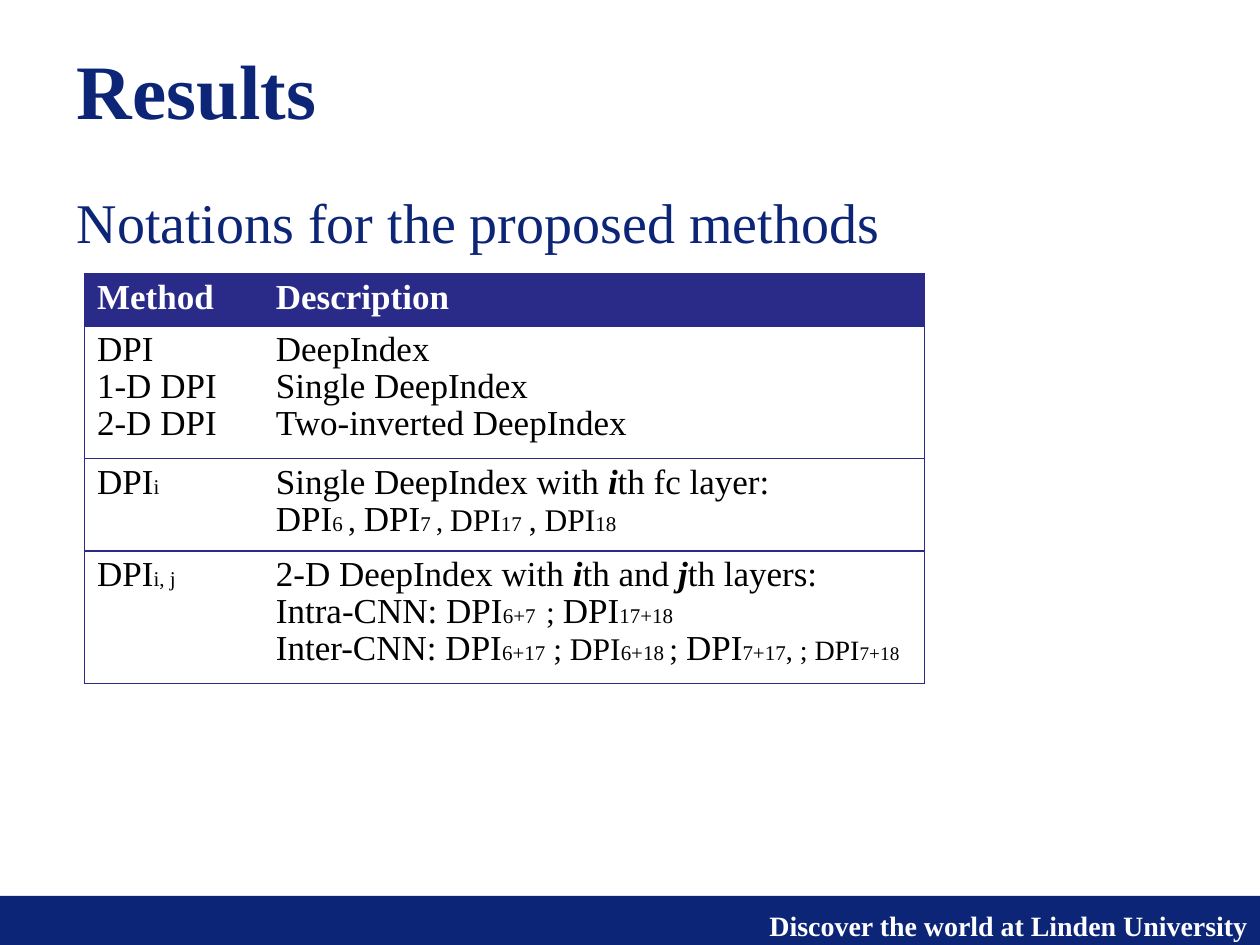
from lxml import etree
from pptx import Presentation, util as u
from pptx.dml.color import RGBColor
from pptx.enum import shapes, text
from pptx.oxml.ns import qn

NAVY, INDIGO, WHITE, BLACK = "0C2577", "2A2A89", "FFFFFF", "000000"

# A cell is a list of lines; a line is a list of (text, size, emphasis) runs.
HEADER = ["Method", "Description"]
ROWS = [
    [
        [[("DPI", 20)], [("1-D DPI", 20)], [("2-D DPI", 20)]],
        [[("DeepIndex", 20)], [("Single DeepIndex", 20)], [("Two-inverted DeepIndex", 20)]],
    ],
    [
        [[("DPI", 20), ("i", 12)]],
        [
            [("Single DeepIndex with ", 20), ("i", 20, True), ("th fc layer:", 20)],
            [("DPI", 20), ("6 ", 12), (", ", 18), ("DPI", 20), ("7 ", 12), (", ", 16),
             ("DPI", 18), ("17", 12), (" ", 16), (", DPI", 18), ("18", 12)],
        ],
    ],
    [
        [[("DPI", 20), ("i, j", 12)]],
        [
            [("2-D DeepIndex with ", 20), ("i", 20, True), ("th and ", 20),
             ("j", 20, True), ("th layers:", 20)],
            [("Intra-CNN: DPI", 20), ("6+7  ", 12), ("; ", 18), ("DPI", 20), ("17+18", 12)],
            [("Inter-CNN: DPI", 20), ("6+17", 12), (" ; DPI", 18), ("6+18 ", 12), ("; ", 18),
             ("DPI", 20), ("7+17", 12), (", ; DPI", 16), ("7+18", 11)],
        ],
    ],
]
COLUMN_WIDTHS = [1.42, 5.25]
ROW_HEIGHTS = [0.41, 1.03, 0.72, 1.03]


def color(value):
    return RGBColor.from_string(value)


def add_run(paragraph, content, size=20, fill=BLACK, bold=False, italic=False,
            font="Times New Roman"):
    run = paragraph.add_run()
    run.text = content
    run.font.name = font
    run.font.size = u.Pt(size)
    run.font.bold = bold
    run.font.italic = italic
    run.font.color.rgb = color(fill)


def set_border(cell, edge, line_color=None):
    """Draw one cell edge (L, R, T or B), or hide it when no colour is given."""
    properties = cell._tc.get_or_add_tcPr()
    line = etree.SubElement(properties, qn(f"a:ln{edge}"), w=str(u.Pt(0.75)))
    if line_color:
        fill = etree.SubElement(line, qn("a:solidFill"))
        etree.SubElement(fill, qn("a:srgbClr"), val=line_color)
    else:
        etree.SubElement(line, qn("a:noFill"))


class SlideBuilder:
    def __init__(self, slide):
        self.slide = slide

    def band(self, left, top, width, height, fill=NAVY):
        shape = self.slide.shapes.add_shape(
            shapes.MSO_SHAPE.RECTANGLE, *map(u.Inches, (left, top, width, height)))
        shape.shadow.inherit = False
        shape.fill.solid()
        shape.fill.fore_color.rgb = color(fill)
        shape.line.fill.background()

    def text(self, content, left, top, width, height, margin_top=0.05,
             align=text.PP_ALIGN.LEFT, anchor=text.MSO_ANCHOR.TOP, **style):
        box = self.slide.shapes.add_textbox(*map(u.Inches, (left, top, width, height)))
        frame = box.text_frame
        frame.word_wrap = True
        frame.margin_top = u.Inches(margin_top)
        frame.vertical_anchor = anchor
        paragraph = frame.paragraphs[0]
        paragraph.alignment = align
        add_run(paragraph, content, **style)

    def table(self, left, top, widths, heights, header, rows):
        frame = self.slide.shapes.add_table(
            len(heights), len(widths),
            *map(u.Inches, (left, top, sum(widths), sum(heights))))
        table = frame.table
        table.horz_banding = False
        for column, width in zip(table.columns, widths):
            column.width = u.Inches(width)
        for row, height in zip(table.rows, heights):
            row.height = u.Inches(height)

        for index, title in enumerate(header):
            self.cell(table, 0, index, [[(title, 20)]], fill=INDIGO, ink=WHITE, bold=True)
        for row_index, row in enumerate(rows, start=1):
            for index, lines in enumerate(row):
                self.cell(table, row_index, index, lines)

    def cell(self, table, row, column, lines, fill=WHITE, ink=BLACK, bold=False):
        cell = table.cell(row, column)
        last = len(table.columns) - 1
        set_border(cell, "L", INDIGO if column == 0 else None)
        set_border(cell, "R", INDIGO if column == last else None)
        set_border(cell, "T", INDIGO)
        set_border(cell, "B", INDIGO)
        cell.fill.solid()
        cell.fill.fore_color.rgb = color(fill)
        frame = cell.text_frame
        for index, line in enumerate(lines):
            paragraph = frame.add_paragraph() if index else frame.paragraphs[0]
            paragraph.line_spacing = 0.95
            for content, size, *emphasis in line:
                add_run(paragraph, content, size=size, fill=ink,
                        bold=bold or bool(emphasis), italic=bool(emphasis))


def main():
    presentation = Presentation()
    presentation.slide_width = u.Inches(10)
    presentation.slide_height = u.Inches(7.5)
    builder = SlideBuilder(presentation.slides.add_slide(presentation.slide_layouts[6]))

    builder.band(0, 7.11, 10, 0.39)
    builder.text("Discover the world at Linden University", 3.31, 7.13, 6.69, 0.37,
                 margin_top=0.08, align=text.PP_ALIGN.RIGHT, size=16, fill=WHITE, bold=True)
    builder.text("Results", 0.51, 0.36, 8.9, 0.69,
                 anchor=text.MSO_ANCHOR.MIDDLE, size=44, fill=NAVY, bold=True)
    builder.text("Notations for the proposed methods", 0.51, 1.39, 8.9, 0.7,
                 margin_top=0.1, size=32, fill=NAVY)
    builder.table(0.67, 2.17, COLUMN_WIDTHS, ROW_HEIGHTS, HEADER, ROWS)

    presentation.save("out.pptx")


if __name__ == "__main__":
    main()
